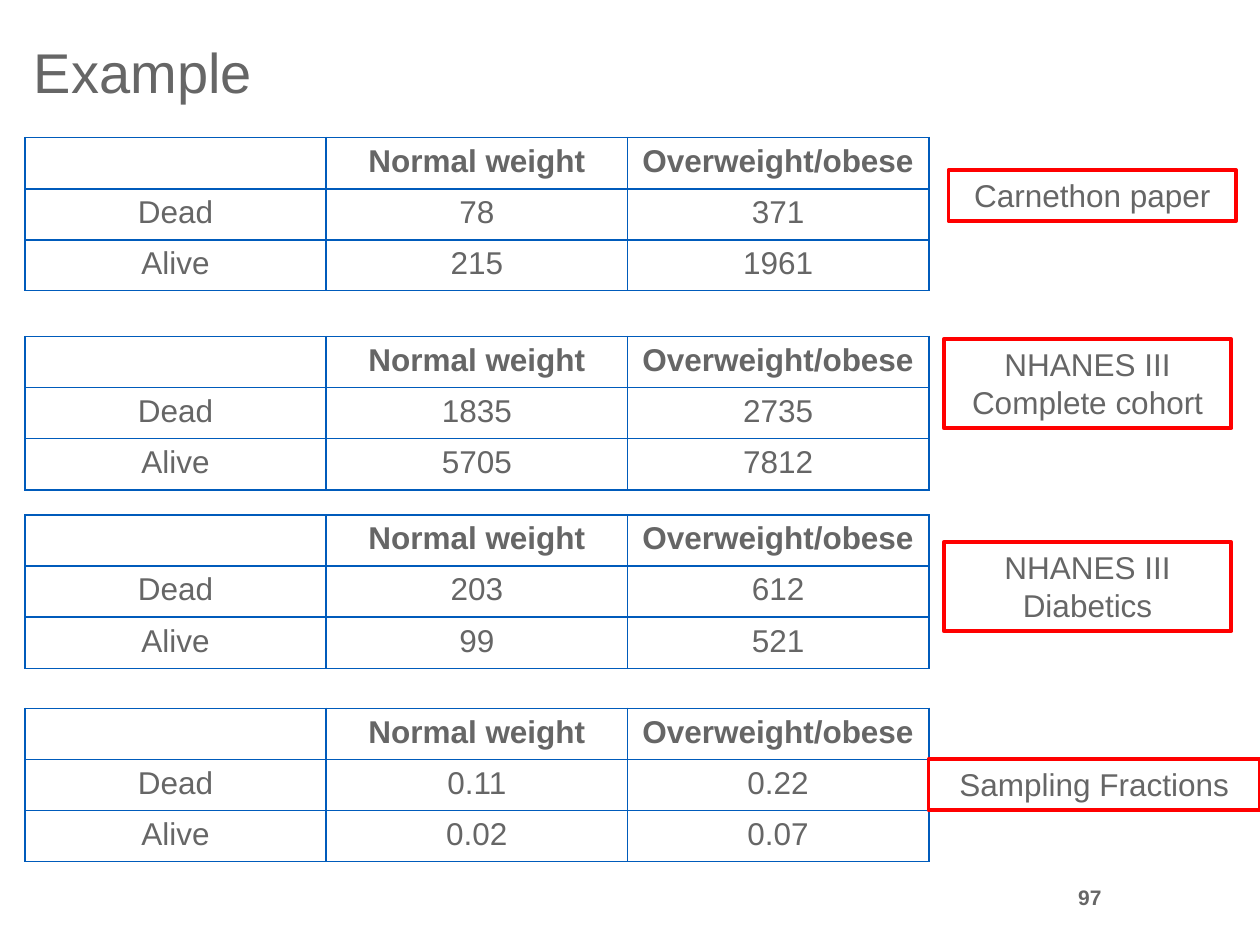
from dataclasses import dataclass

from lxml import etree
from pptx import Presentation
from pptx.dml.color import RGBColor
from pptx.enum.shapes import MSO_SHAPE
from pptx.enum.text import MSO_ANCHOR, PP_ALIGN
from pptx.oxml.ns import qn
from pptx.util import Pt

RECTANGLE = MSO_SHAPE.RECTANGLE
TOP, MIDDLE = MSO_ANCHOR.TOP, MSO_ANCHOR.MIDDLE
LEFT, CENTER, RIGHT = PP_ALIGN.LEFT, PP_ALIGN.CENTER, PP_ALIGN.RIGHT


@dataclass(frozen=True)
class Theme:
    font: str = "Arial"
    text: str = "666666"
    paper: str = "FFFFFF"
    grid: str = "005BBB"
    accent: str = "FF0000"
    title_size: int = 32
    body_size: int = 18
    number_size: int = 12


THEME = Theme()

# Content
TITLE = "Example"
PAGE_NUMBER = "97"
HEADER = ("", "Normal weight", "Overweight/obese")
# Each study: table top, last row height, dead, alive, label lines, label box
STUDIES = [
    (78.7, 27.4, ("78", "371"), ("215", "1961"),
     ["Carnethon paper"], (542, 97.2, 164.4, 29.1)),
    (192.3, 29.2, ("1835", "2735"), ("5705", "7812"),
     ["NHANES III", "Complete cohort"], (539.3, 193.8, 164.4, 50.9)),
    (294.3, 29.2, ("203", "612"), ("99", "521"),
     ["NHANES III", "Diabetics"], (539.3, 309.8, 164.4, 50.9)),
    (404.8, 29.2, ("0.11", "0.22"), ("0.02", "0.07"),
     ["Sampling Fractions"], (530.6, 433.8, 189.4, 29.1)),
]

# Layout
TABLE_LEFT, COLUMN_WIDTH, ROW_HEIGHT = 14.2, 172.2, 29.2
TITLE_BOX = (12.2, 18, 656, 46)
NUMBER_BOX = (594, 491.8, 42.5, 41.8)


def points(box):
    return [Pt(length) for length in box]


def write(frame, lines, size, align, bold=False):
    frame.text = "\n".join(lines)
    for paragraph in frame.paragraphs:
        paragraph.alignment = align
        font = paragraph.font
        font.name, font.size, font.bold = THEME.font, Pt(size), bold
        font.color.rgb = RGBColor.from_string(THEME.text)


def add_borders(cell):
    properties = cell._tc.get_or_add_tcPr()
    for position, side in enumerate(("lnL", "lnR", "lnT", "lnB")):
        line = etree.Element(qn(f"a:{side}"), w=str(Pt(1)))
        fill = etree.SubElement(line, qn("a:solidFill"))
        etree.SubElement(fill, qn("a:srgbClr"), val=THEME.grid)
        properties.insert(position, line)


def add_study_table(slide, top, rows, heights):
    table = slide.shapes.add_table(
        len(rows), len(HEADER),
        *points((TABLE_LEFT, top, COLUMN_WIDTH * len(HEADER), sum(heights))),
    ).table
    table.horz_banding = False
    for column in table.columns:
        column.width = Pt(COLUMN_WIDTH)
    for r, (values, height) in enumerate(zip(rows, heights)):
        table.rows[r].height = Pt(height)
        for c, value in enumerate(values):
            cell = table.cell(r, c)
            write(cell.text_frame, [value], THEME.body_size, CENTER, bold=r == 0)
            cell.fill.solid()
            cell.fill.fore_color.rgb = RGBColor.from_string(THEME.paper)
            add_borders(cell)


def add_label(slide, lines, box):
    label = slide.shapes.add_shape(RECTANGLE, *points(box))
    label.shadow.inherit = False
    label.fill.solid()
    label.fill.fore_color.rgb = RGBColor.from_string(THEME.paper)
    label.line.color.rgb = RGBColor.from_string(THEME.accent)
    label.line.width = Pt(2.25)
    label.text_frame.word_wrap = True
    label.text_frame.vertical_anchor = TOP
    write(label.text_frame, lines, THEME.body_size, CENTER)


def main():
    deck = Presentation()
    deck.slide_width, deck.slide_height = Pt(720), Pt(540)
    slide = deck.slides.add_slide(deck.slide_layouts[5])

    # Title
    title = slide.shapes.title
    title.left, title.top, title.width, title.height = points(TITLE_BOX)
    title.text_frame.vertical_anchor = TOP
    write(title.text_frame, [TITLE], THEME.title_size, LEFT)

    # Page number
    number = slide.shapes.add_textbox(*points(NUMBER_BOX)).text_frame
    number.word_wrap = True
    number.vertical_anchor = MIDDLE
    write(number, [PAGE_NUMBER], THEME.number_size, RIGHT, bold=True)

    # Study tables, then their labels on top
    for top, last_height, dead, alive, _, _ in STUDIES:
        rows = [HEADER, ("Dead", *dead), ("Alive", *alive)]
        add_study_table(slide, top, rows, (ROW_HEIGHT, ROW_HEIGHT, last_height))
    for *_, lines, box in STUDIES:
        add_label(slide, lines, box)

    deck.save("out.pptx")


if __name__ == "__main__":
    main()
